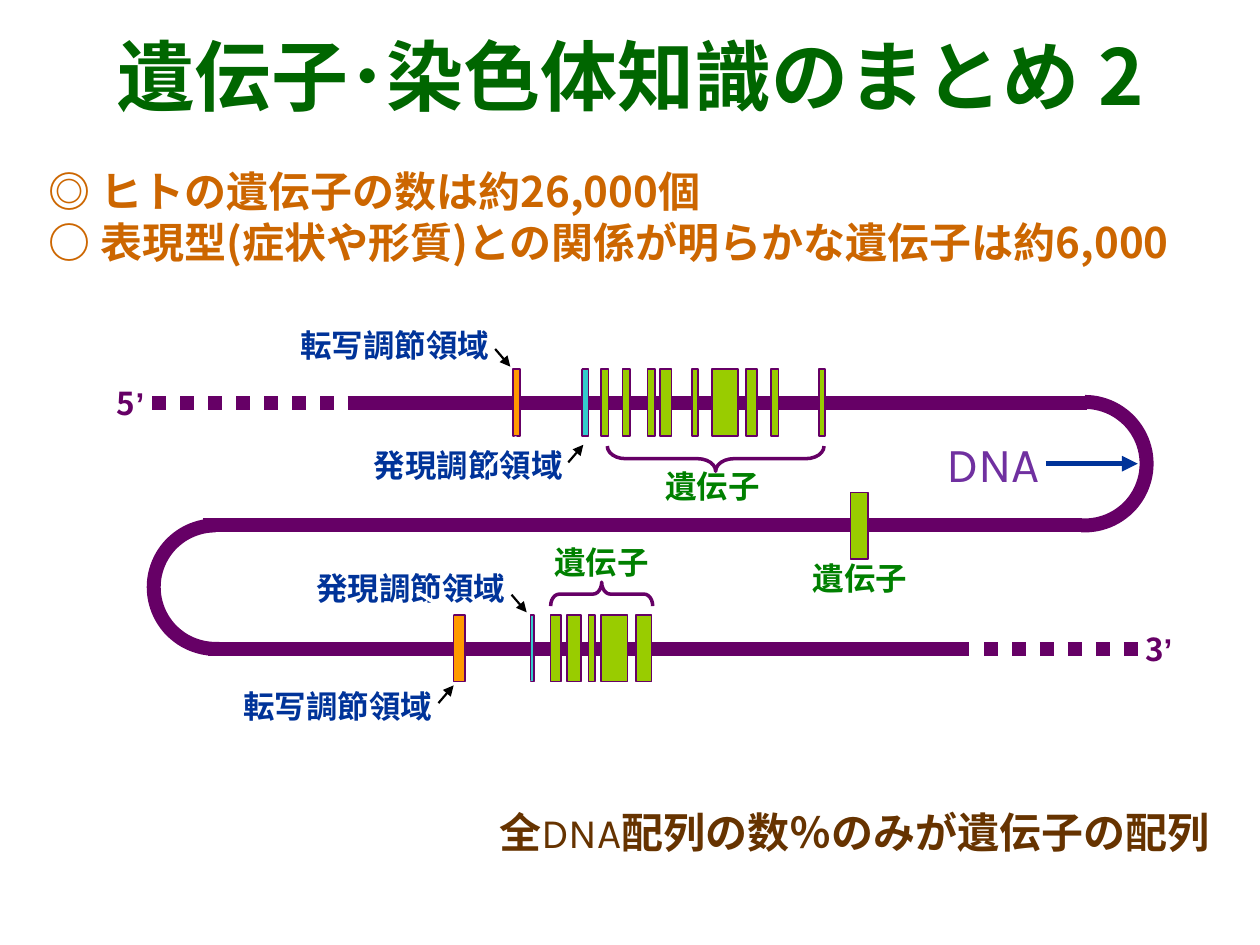
import math
from typing import NamedTuple

from lxml import etree
from pptx import Presentation
from pptx.dml.color import RGBColor
from pptx.enum.dml import MSO_LINE
from pptx.enum.shapes import MSO_CONNECTOR, MSO_SHAPE
from pptx.enum.text import MSO_ANCHOR, MSO_AUTO_SIZE, PP_ALIGN
from pptx.oxml.ns import qn
from pptx.util import Inches, Pt

STRAIGHT = MSO_CONNECTOR.STRAIGHT
RECTANGLE, LEFT_BRACE = MSO_SHAPE.RECTANGLE, MSO_SHAPE.LEFT_BRACE
DOTTED = MSO_LINE.ROUND_DOT
MIDDLE = MSO_ANCHOR.MIDDLE
FIT_SHAPE, NO_FIT = MSO_AUTO_SIZE.SHAPE_TO_FIT_TEXT, MSO_AUTO_SIZE.NONE
LEFT, CENTER, RIGHT = PP_ALIGN.LEFT, PP_ALIGN.CENTER, PP_ALIGN.RIGHT

PURPLE = RGBColor(0x66, 0x00, 0x66)
VIOLET = RGBColor(0x70, 0x30, 0xA0)
LIME = RGBColor(0x99, 0xCC, 0x00)
CYAN = RGBColor(0x33, 0xCC, 0xCC)
AMBER = RGBColor(0xFF, 0x99, 0x00)
NAVY = RGBColor(0x00, 0x33, 0x99)
GREEN = RGBColor(0x00, 0x80, 0x00)
DARK_GREEN = RGBColor(0x00, 0x66, 0x00)
ORANGE = RGBColor(0xCC, 0x66, 0x00)
BROWN = RGBColor(0x66, 0x33, 0x00)
WHITE = RGBColor(0xFF, 0xFF, 0xFF)
BLACK = RGBColor(0x00, 0x00, 0x00)

CJK, KARLA, ARIAL = "Noto Sans CJK JP", "Karla", "Arial"
STRAND_WIDTH = 8
TOP_Y, MIDDLE_Y, BOTTOM_Y = 3.19, 4.17, 5.15
TOP_REGION, MIDDLE_REGION, BOTTOM_REGION = 2.93, 3.91, 4.88
REGION_HEIGHT = 0.53


class Region(NamedTuple):
    left: float
    top: float
    width: float
    color: RGBColor = LIME


class Segment(NamedTuple):
    start: tuple[float, float]
    end: tuple[float, float]
    color: RGBColor = PURPLE
    width: float = STRAND_WIDTH
    dotted: bool = False
    arrow: bool = False


class Brace(NamedTuple):
    left: float
    top: float
    width: float
    height: float
    rotation: int
    curve: float


class Piece(NamedTuple):
    text: str
    font: str = CJK
    bold: bool = True


class Label(NamedTuple):
    left: float
    top: float
    width: float
    height: float
    lines: list[list[Piece]]
    color: RGBColor
    size: int = 18
    align: PP_ALIGN = LEFT
    wrap: bool = True


STRANDS = [
    Segment((1.65, BOTTOM_Y), (7.69, BOTTOM_Y)),
    Segment((2.76, 3.2), (8.63, 3.2)),
    Segment((1.21, 3.2), (2.66, 3.2), dotted=True),
    Segment((1.61, MIDDLE_Y), (8.59, MIDDLE_Y)),
    Segment((7.81, BOTTOM_Y), (9.1, BOTTOM_Y), dotted=True),
]

TOP_GENES = [(4.77, 0.06), (4.94, 0.06), (5.14, 0.06), (5.24, 0.09), (5.49, 0.05),
             (5.65, 0.21), (5.92, 0.09), (6.12, 0.06), (6.5, 0.05)]
BOTTOM_GENES = [(4.37, 0.08), (4.5, 0.11), (4.67, 0.05), (4.77, 0.21), (5.05, 0.12)]
REGIONS = [
    *(Region(left, TOP_REGION, width) for left, width in TOP_GENES),
    *(Region(left, BOTTOM_REGION, width) for left, width in BOTTOM_GENES),
    Region(6.75, MIDDLE_REGION, 0.14),
    Region(4.62, TOP_REGION, 0.05, CYAN),
    Region(4.21, BOTTOM_REGION, 0.03, CYAN),
    Region(4.07, TOP_REGION, 0.06, AMBER),
    Region(3.6, BOTTOM_REGION, 0.09, AMBER),
]

BRACES = [
    Brace(5.58, 2.78, 0.2, 1.72, 270, 0.72),
    Brace(4.68, 4.31, 0.19, 0.81, 90, 0.36),
]

GENE = [[Piece("遺伝子")]]
TRANSCRIPTION = [[Piece("転写調節領域")]]
EXPRESSION = [[Piece("発現調節領域")]]
LABELS = [
    Label(5.18, 3.66, 1.22, 0.4, GENE, GREEN),
    Label(4.3, 4.26, 1.26, 0.4, GENE, GREEN),
    Label(6.35, 4.39, 1.39, 0.4, GENE, GREEN),
    Label(7.41, 3.39, 0.99, 0.57, [[Piece("DNA", KARLA, False)]], VIOLET, 28),
    Label(2.25, 2.54, 1.77, 0.4, TRANSCRIPTION, NAVY, align=CENTER),
    Label(2.81, 3.49, 1.81, 0.4, EXPRESSION, NAVY, align=CENTER),
    Label(2.37, 4.47, 1.78, 0.4, EXPRESSION, NAVY, align=CENTER),
    Label(1.79, 5.4, 1.78, 0.4, TRANSCRIPTION, NAVY, align=CENTER),
    Label(0.83, 3, 0.46, 0.4, [[Piece("5"), Piece("’", ARIAL)]], PURPLE, wrap=False),
    Label(8.99, 4.95, 0.46, 0.4, [[Piece("3"), Piece("’", ARIAL)]], PURPLE, wrap=False),
    Label(2.01, 6.35, 7.69, 0.5,
          [[Piece("全"), Piece("DNA", KARLA, False), Piece("配列の数％のみが遺伝子の配列")]],
          BROWN, 24, RIGHT),
    Label(0.29, 1.26, 9.62, 0.91,
          [[Piece("◎ ヒトの遺伝子の数は約26,000個")],
           [Piece("○ 表現型(症状や形質)との関係が明らかな遺伝子は約6,000")]],
          ORANGE, 24),
]

WHITE_ARROWS = [((4.33, 2.74), (4.62, 2.93)), ((3.83, 3.76), (4.1, 3.46)),
                ((3.3, 4.69), (3.6, 4.88)), ((3.94, 5.7), (4.21, 5.4))]
BLACK_ARROWS = [((4.51, 3.67), (4.63, 3.53)), ((4.06, 4.72), (4.18, 4.86)),
                ((3.93, 2.77), (4.05, 2.91)), ((3.48, 5.58), (3.6, 5.44))]
ARROWS = [
    Segment((8.3, 3.68), (9.03, 3.68), NAVY, 3, arrow=True),
    *(Segment(start, end, WHITE, 2, arrow=True) for start, end in WHITE_ARROWS),
    *(Segment(start, end, BLACK, 1.25, arrow=True) for start, end in BLACK_ARROWS),
]


def style_outline(shape, color: RGBColor, width: float) -> None:
    shape.line.color.rgb = color
    shape.line.width = Pt(width)


def draw_segment(slide, segment: Segment) -> None:
    points = [Inches(value) for value in (*segment.start, *segment.end)]
    connector = slide.shapes.add_connector(STRAIGHT, *points)
    style_outline(connector, segment.color, segment.width)
    if segment.dotted:
        connector.line.dash_style = DOTTED
    if segment.arrow:
        outline = connector.line._get_or_add_ln()
        etree.SubElement(outline, qn("a:tailEnd"), type="triangle")
    etree.SubElement(connector._element.spPr, qn("a:effectLst"))


def draw_bend(slide, center_x: float, top: float, bottom: float, side: int) -> None:
    """Join two strands by a half circle; side is 1 for right and -1 for left."""
    radius, steps = (bottom - top) / 2, 48
    angles = [math.pi * step / steps for step in range(steps + 1)]
    points = [(Inches(center_x + side * radius * math.sin(angle)),
               Inches(top + radius * (1 - math.cos(angle)))) for angle in angles]
    points.append((Inches(center_x - side * 0.03), Inches(bottom)))
    builder = slide.shapes.build_freeform(*points[0])
    builder.add_line_segments(points[1:], close=False)
    bend = builder.convert_to_shape()
    bend.fill.background()
    bend.shadow.inherit = False
    style_outline(bend, PURPLE, STRAND_WIDTH)


def draw_region(slide, region: Region) -> None:
    box = slide.shapes.add_shape(RECTANGLE, Inches(region.left), Inches(region.top),
                                 Inches(region.width), Inches(REGION_HEIGHT))
    box.fill.solid()
    box.fill.fore_color.rgb = region.color
    box.shadow.inherit = False
    style_outline(box, PURPLE, 1)


def draw_brace(slide, brace: Brace) -> None:
    shape = slide.shapes.add_shape(LEFT_BRACE, *(Inches(value) for value in brace[:4]))
    shape.rotation = brace.rotation
    shape.adjustments[0] = brace.curve
    shape.fill.background()
    shape.shadow.inherit = False
    style_outline(shape, PURPLE, 2)


def style_run(run, font: str, size: int, color: RGBColor, bold: bool) -> None:
    run.font.name, run.font.size, run.font.bold = font, Pt(size), bold
    run.font.color.rgb = color
    latin = run.font._element.find(qn("a:latin"))
    latin.addnext(latin.makeelement(qn("a:ea"), {"typeface": font}))


def draw_label(slide, label: Label) -> None:
    frame = slide.shapes.add_textbox(*(Inches(value) for value in label[:4])).text_frame
    frame.word_wrap = label.wrap
    frame.auto_size = FIT_SHAPE
    frame.vertical_anchor = MIDDLE if len(label.lines) > 1 else MSO_ANCHOR.TOP
    for index, pieces in enumerate(label.lines):
        paragraph = frame.add_paragraph() if index else frame.paragraphs[0]
        paragraph.alignment = label.align
        for piece in pieces:
            run = paragraph.add_run()
            run.text = piece.text
            style_run(run, piece.font, label.size, label.color, piece.bold)


def set_title(slide, text: str) -> None:
    title = slide.shapes.title
    title.left, title.top = Inches(0.28), Inches(0.2)
    title.width, title.height = Inches(9.45), Inches(0.79)
    frame = title.text_frame
    frame.text = text
    frame.auto_size, frame.vertical_anchor = NO_FIT, MIDDLE
    frame.paragraphs[0].alignment = CENTER
    style_run(frame.paragraphs[0].runs[0], CJK, 44, DARK_GREEN, True)


def main() -> None:
    presentation = Presentation()
    presentation.slide_width, presentation.slide_height = Inches(10), Inches(7.5)
    slide = presentation.slides.add_slide(presentation.slide_layouts[5])
    set_title(slide, "遺伝子･染色体知識のまとめ 2")
    for strand in STRANDS:
        draw_segment(slide, strand)
    draw_bend(slide, 8.61, TOP_Y, MIDDLE_Y, 1)
    draw_bend(slide, 1.71, MIDDLE_Y, BOTTOM_Y, -1)
    for draw, items in ((draw_region, REGIONS), (draw_brace, BRACES),
                        (draw_label, LABELS), (draw_segment, ARROWS)):
        for item in items:
            draw(slide, item)
    presentation.save("out.pptx")


if __name__ == "__main__":
    main()
